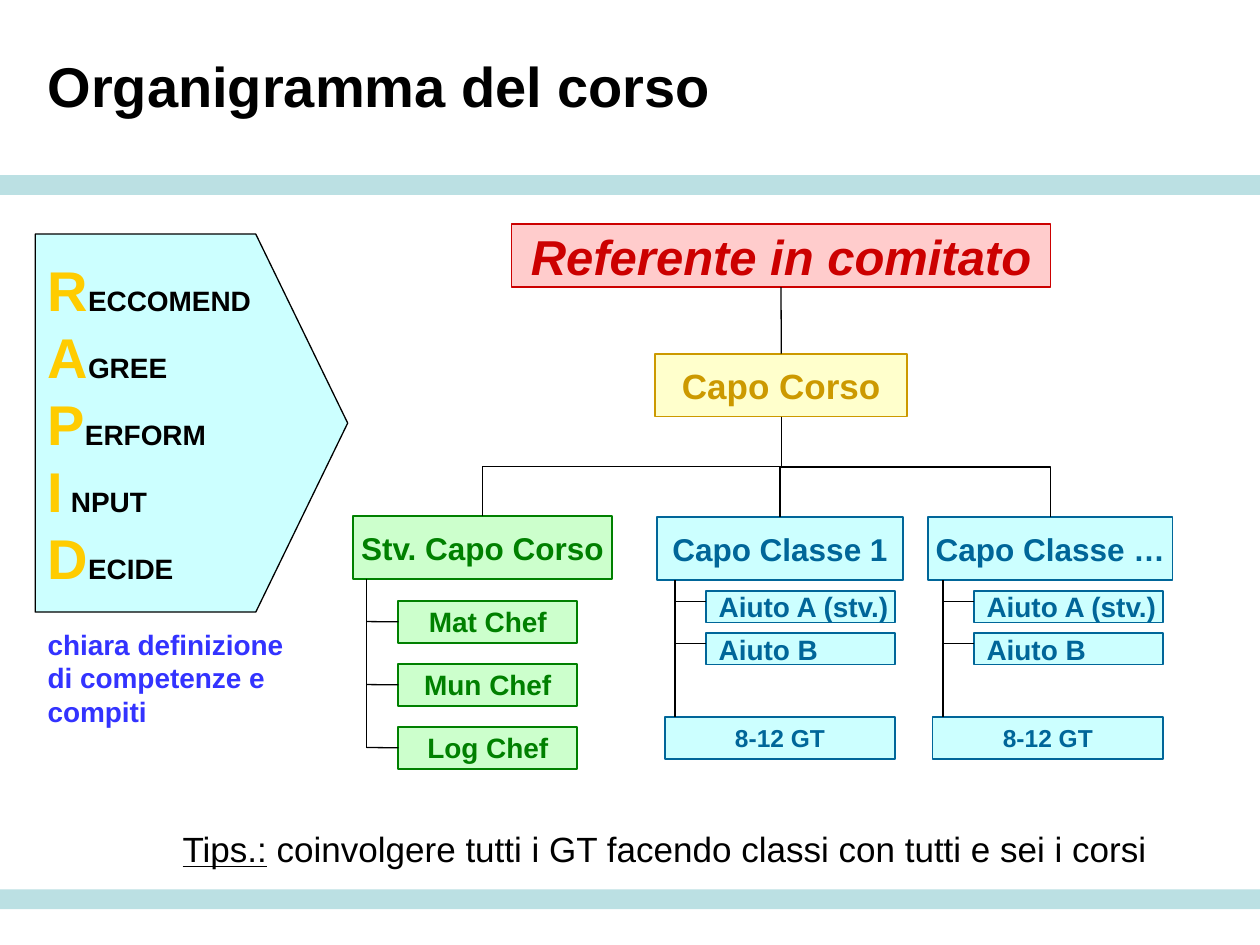
from lxml import etree
from pptx import Presentation
from pptx.dml.color import RGBColor
from pptx.enum.shapes import MSO_CONNECTOR, MSO_SHAPE
from pptx.enum.text import MSO_ANCHOR, PP_ALIGN
from pptx.oxml.ns import qn
from pptx.util import Cm, Pt

RECT, ARROW = MSO_SHAPE.RECTANGLE, MSO_SHAPE.PENTAGON
STRAIGHT, ELBOW = MSO_CONNECTOR.STRAIGHT, MSO_CONNECTOR.ELBOW
LEFT, CENTER = PP_ALIGN.LEFT, PP_ALIGN.CENTER
TOP, MIDDLE = MSO_ANCHOR.TOP, MSO_ANCHOR.MIDDLE

BLACK = RGBColor(0x00, 0x00, 0x00)
BAND = RGBColor(0xBB, 0xE0, 0xE3)
GOLD = RGBColor(0xFF, 0xCC, 0x00)
VIOLET = RGBColor(0x33, 0x33, 0xFF)
RED, PINK = RGBColor(0xCC, 0x00, 0x00), RGBColor(0xFF, 0xCC, 0xCC)
OCHRE, CREAM = RGBColor(0xCC, 0x99, 0x00), RGBColor(0xFF, 0xFF, 0xCC)
GREEN, MINT = RGBColor(0x00, 0x80, 0x00), RGBColor(0xCC, 0xFF, 0xCC)
BLUE, AQUA = RGBColor(0x00, 0x66, 0x99), RGBColor(0xCC, 0xFF, 0xFF)

deck = Presentation()
deck.slide_width, deck.slide_height = Cm(25.4), Cm(19.05)
page = deck.slides.add_slide(deck.slide_layouts[6])


def add_box(bounds, lines=(), fill=None, edge=None, align=CENTER,
            anchor=MIDDLE, kind=RECT, width=1):
    """Add a box; each line is a list of (text, size, colour, other formats)."""
    bounds = [Cm(length) for length in bounds]
    if fill is None:
        box = page.shapes.add_textbox(*bounds)
    else:
        box = page.shapes.add_shape(kind, *bounds)
        box.shadow.inherit = False
        box.fill.solid()
        box.fill.fore_color.rgb = fill
        if edge is None:
            box.line.fill.background()
        else:
            box.line.color.rgb = edge
            box.line.width = Pt(width)
    frame = box.text_frame
    frame.word_wrap = fill is None
    frame.vertical_anchor = anchor
    for number, line in enumerate(lines):
        para = frame.add_paragraph() if number else frame.paragraphs[0]
        para.alignment = align
        for text, size, color, extra in line:
            span = para.add_run()
            span.text = text
            formats = {"name": "Arial", "size": Pt(size), "bold": True} | extra
            for name, value in formats.items():
                setattr(span.font, name, value)
            span.font.color.rgb = color
    return box


def add_line(x1, y1, x2, y2, kind=STRAIGHT, start=None, end=None):
    line = page.shapes.add_connector(kind, Cm(x1), Cm(y1), Cm(x2), Cm(y2))
    line.line.color.rgb = BLACK
    line.line.width = Pt(0.75)
    etree.SubElement(line._element.spPr, qn("a:effectLst"))
    if start is not None:
        line.begin_connect(start, 2)
    if end is not None:
        line.end_connect(end, 0 if start is not None else 1)
    return line


# Bands and title
for top in (3.53, 17.93):
    add_box((0, top, 25.4, 0.4), fill=BAND)
add_box((0.71, 0.13, 21.16, 3.18),
        [[("Organigramma del corso", 32, BLACK, {})]], align=LEFT)

# RAPID arrow and its caption
words = ("RECCOMEND", "AGREE", "PERFORM", "I NPUT", "DECIDE")
rapid = add_box((0.71, 4.72, 6.3, 7.62),
                [[(word[0], 32, GOLD, {}), (word[1:], 16, BLACK, {})]
                 for word in words],
                AQUA, BLACK, LEFT, kind=ARROW, width=0.75)
rapid.adjustments[0] = 0.294
add_box((0.71, 12.52, 5.51, 2.31),
        [[("chiara definizione di competenze e compiti", 16, VIOLET, {})]],
        align=LEFT, anchor=TOP)

# Top of the chart
referent = add_box((10.31, 4.52, 10.87, 1.27),
                   [[("Referente in comitato", 28, RED, {"italic": True})]],
                   PINK, RED)
head = add_box((13.21, 7.13, 5.08, 1.27),
               [[("Capo Corso", 20, OCHRE, {})]], CREAM, OCHRE)
add_line(15.74, 5.79, 15.74, 7.13, start=referent, end=head)

# Deputy branch
deputy = add_box((7.11, 10.41, 5.23, 1.27),
                 [[("Stv. Capo Corso", 18, GREEN, {})]], MINT, GREEN)
add_line(7.39, 11.68, 7.39, 15.07)
for row, role in enumerate(("Mat Chef", "Mun Chef", "Log Chef")):
    top = 12.11 + 1.27 * row
    helper = add_box((8.03, top, 3.61, 0.85),
                     [[(role, 16, GREEN, {})]], MINT, GREEN)
    add_line(7.39, top + 0.42, 8.03, top + 0.42, end=helper)

# Class branches
branches = [deputy]
for name, left, width, spine in (("Capo Classe 1", 13.24, 4.97, 13.61),
                                 ("Capo Classe …", 18.71, 4.93, 19.01)):
    branches.append(add_box((left, 10.43, width, 1.27),
                            [[(name, 18, BLUE, {})]], AQUA, BLUE))
    for row, role in enumerate(("Aiuto A (stv.)", "Aiuto B")):
        top = 11.91 + 0.85 * row
        add_box((spine + 0.63, top, 3.81, 0.64),
                [[(role, 16, BLUE, {})]], AQUA, BLUE, LEFT)
        add_line(spine, top + 0.21, spine + 0.63, top + 0.21)
    add_box((spine - 0.21, 14.45, 4.65, 0.85),
            [[("8-12 GT", 14, BLUE, {})]], AQUA, BLUE)
    add_line(spine, 11.7, spine, 14.45)

# Elbow connectors, turned so that they leave and arrive vertically
start_x, start_y = head.left + head.width // 2, head.top + head.height
for branch in branches:
    elbow = add_line(0, 0, 0, 0, ELBOW, head, branch)
    end_x = branch.left + branch.width // 2
    drop, shift = branch.top - start_y, abs(end_x - start_x)
    elbow.left = (start_x + end_x - drop) // 2
    elbow.top = (start_y + branch.top - shift) // 2
    elbow.width, elbow.height = drop, shift
    frame = elbow._element.spPr.find(qn("a:xfrm"))
    frame.attrib.clear()
    if end_x > start_x:
        frame.set("rot", "16200000")
        frame.set("flipH", "1")
    else:
        frame.set("rot", "5400000")

# Tip
add_box((3.43, 16.56, 20.37, 1.19),
        [[("Tips.:", 20, BLACK, {"bold": False, "underline": True}),
          (" coinvolgere tutti i GT facendo classi con tutti e sei i corsi",
           20, BLACK, {"bold": False})]], align=LEFT, anchor=TOP)

deck.save("out.pptx")
